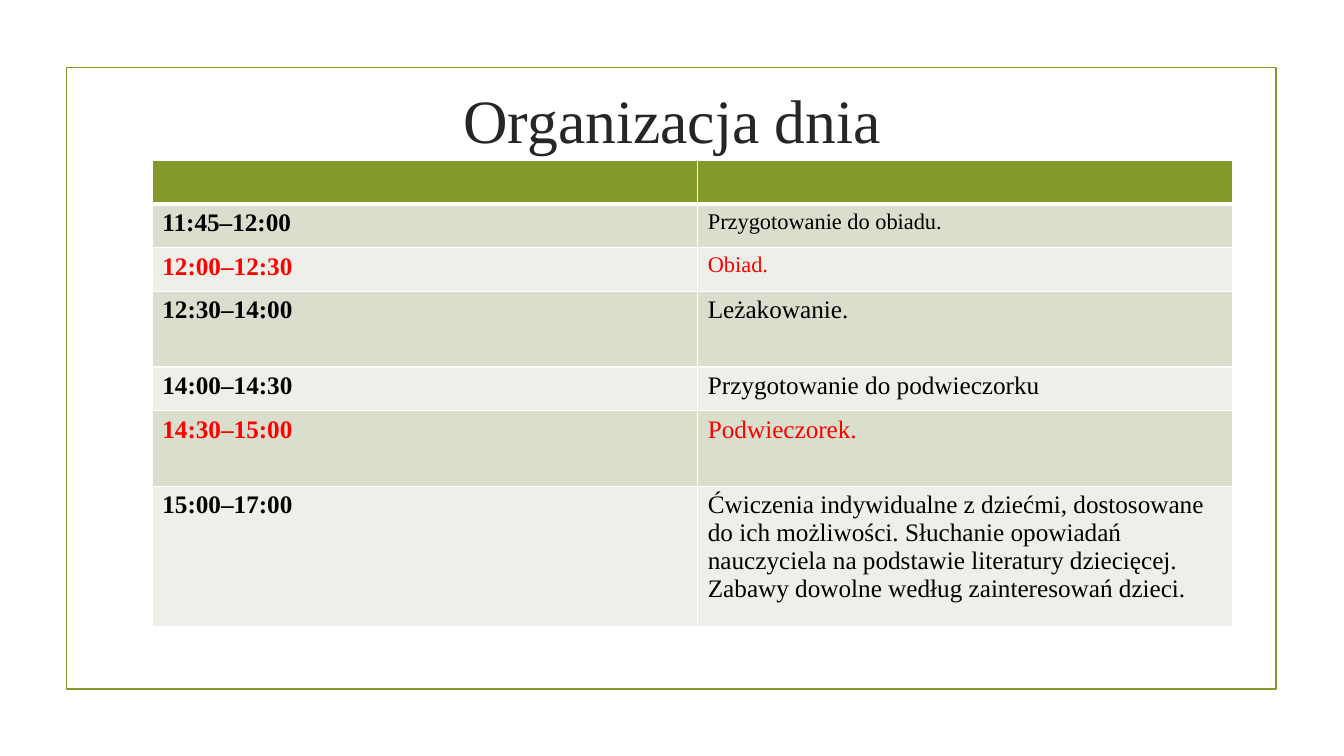
from lxml import etree
from pptx import Presentation
from pptx.dml.color import RGBColor
from pptx.enum.shapes import MSO_SHAPE
from pptx.enum.text import MSO_ANCHOR, PP_ALIGN
from pptx.oxml.ns import qn
from pptx.util import Inches, Pt

RECTANGLE = MSO_SHAPE.RECTANGLE
MIDDLE = MSO_ANCHOR.MIDDLE
CENTER = PP_ALIGN.CENTER

GREEN = RGBColor(0x83, 0x99, 0x2A)
BAND_DARK = RGBColor(0xD9, 0xDE, 0xCD)
BAND_LIGHT = RGBColor(0xED, 0xEF, 0xE8)
WHITE = RGBColor(0xFF, 0xFF, 0xFF)
BLACK = RGBColor(0, 0, 0)
RED = RGBColor(0xFF, 0, 0)
TITLE_GREY = RGBColor(0x26, 0x26, 0x26)

# Row heights in percent of the slide height
ROW, TALL_ROW, LAST_ROW = 5.78, 10, 18.53

# Time, activity, text colour, activity size, row height
SCHEDULE = [
    ("11:45–12:00", "Przygotowanie do obiadu.", BLACK, 16, ROW),
    ("12:00–12:30", "Obiad.", RED, 16, ROW),
    ("12:30–14:00", "Leżakowanie.", BLACK, 18, TALL_ROW),
    ("14:00–14:30", "Przygotowanie do podwieczorku", BLACK, 18, ROW),
    ("14:30–15:00", "Podwieczorek.", RED, 18, TALL_ROW),
    ("15:00–17:00",
     "Ćwiczenia indywidualne z dziećmi, dostosowane do ich możliwości. "
     "Słuchanie opowiadań nauczyciela na podstawie literatury dziecięcej. "
     "Zabawy dowolne według zainteresowań dzieci.", BLACK, 18, LAST_ROW),
]


class SlideBuilder:
    """Places elements by percent of the slide's width and height."""

    font = "Times New Roman"

    def __init__(self, prs):
        self.prs = prs
        self.slide = prs.slides.add_slide(prs.slide_layouts[6])

    def x(self, percent):
        return round(self.prs.slide_width * percent / 100)

    def y(self, percent):
        return round(self.prs.slide_height * percent / 100)

    def box(self, left, top, width, height):
        return self.x(left), self.y(top), self.x(width), self.y(height)

    def set_text(self, tf, text, size, color, bold=False):
        tf.text = text
        p = tf.paragraphs[0]
        font = p.runs[0].font
        font.name, font.size, font.bold = self.font, Pt(size), bold
        font.color.rgb = color
        return p

    def frame(self, *area):
        sp = self.slide.shapes.add_shape(RECTANGLE, *self.box(*area))
        sp.shadow.inherit = False
        sp.fill.background()
        sp.line.color.rgb = GREEN
        sp.line.width = Pt(1.25)

    def title(self, text, *area):
        tf = self.slide.shapes.add_textbox(*self.box(*area)).text_frame
        tf.word_wrap = True
        tf.vertical_anchor = MIDDLE
        self.set_text(tf, text, 44, TITLE_GREY).alignment = CENTER

    def style_cell(self, cell, fill, top=1, bottom=1):
        tc_pr = cell._tc.get_or_add_tcPr()
        for side, width in (("L", 1), ("R", 1), ("T", top), ("B", bottom)):
            ln = etree.SubElement(tc_pr, qn(f"a:ln{side}"), w=str(Pt(width)))
            solid = etree.SubElement(ln, qn("a:solidFill"))
            etree.SubElement(solid, qn("a:srgbClr"), val=str(WHITE))
        cell.fill.solid()
        cell.fill.fore_color.rgb = fill

    def schedule(self, rows, left, top, widths):
        heights = [ROW] + [row[-1] for row in rows]
        area = self.box(left, top, sum(widths), sum(heights))
        table = self.slide.shapes.add_table(len(heights), len(widths), *area).table
        for column, width in zip(table.columns, widths):
            column.width = self.x(width)
        for row, height in zip(table.rows, heights):
            row.height = self.y(height)

        # Empty header
        for cell in table.rows[0].cells:
            self.style_cell(cell, GREEN, bottom=3)

        # Banded body
        for i, (time, activity, color, size, _) in enumerate(rows, 1):
            fill = BAND_DARK if i % 2 else BAND_LIGHT
            for cell in table.rows[i].cells:
                self.style_cell(cell, fill, top=3 if i == 1 else 1)
            self.set_text(table.cell(i, 0).text_frame, time, 18, color, bold=True)
            self.set_text(table.cell(i, 1).text_frame, activity, size, color)


def main():
    prs = Presentation()
    prs.slide_width, prs.slide_height = Inches(13.33), Inches(7.5)
    s = SlideBuilder(prs)
    s.frame(4.95, 8.93, 90.02, 82.27)
    s.title("Organizacja dnia", 10.65, 6.13, 78.77, 19.07)
    s.schedule(SCHEDULE, 11.33, 21.2, (40.59, 39.83))
    prs.save("out.pptx")


if __name__ == "__main__":
    main()
